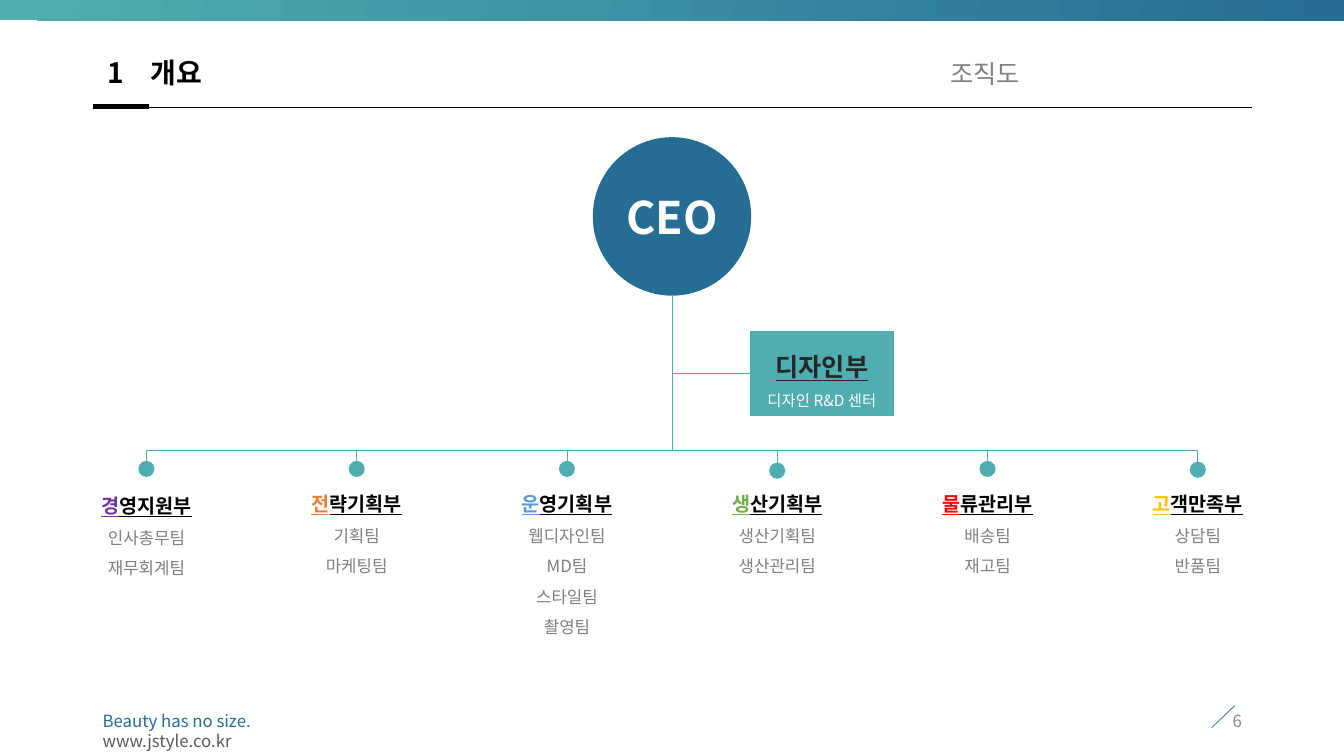
from lxml.etree import SubElement
from pptx import Presentation
from pptx.dml.color import RGBColor
from pptx.enum.shapes import MSO_CONNECTOR as Connector, MSO_SHAPE as Shape
from pptx.enum.text import MSO_ANCHOR as Anchor, PP_ALIGN as Align
from pptx.oxml.ns import qn
from pptx.util import Pt

FONT = "Noto Sans CJK KR"
TEAL, BLUE, BLACK, GRAY, WHITE = "4FAEB1", "256D93", "000000", "808080", "FFFFFF"
color = RGBColor.from_string


def write(frame, paragraphs, align=Align.LEFT, spacing=1.0):
    """Fill a text frame; each paragraph is a list of (text, size, colour, format)."""
    for index, runs in enumerate(paragraphs):
        paragraph = frame.add_paragraph() if index else frame.paragraphs[0]
        paragraph.alignment = align
        paragraph.line_spacing = spacing
        for text, size, hex_color, formats in runs:
            run = paragraph.add_run()
            run.text = text
            run.font.color.rgb = color(hex_color)
            values = {"size": Pt(size), "name": FONT, "bold": False, **formats}
            for name, value in values.items():
                setattr(run.font, name, value)
            SubElement(run._r.get_or_add_rPr(), qn("a:ea"), typeface=FONT)


def draw_line(x1, y1, x2, y2, hex_color=TEAL, width=0.5):
    line = slide.shapes.add_connector(
        Connector.STRAIGHT, Pt(x1), Pt(y1), Pt(x2), Pt(y2))
    line.line.color.rgb = color(hex_color)
    line.line.width = Pt(width)
    SubElement(line._element.spPr, qn("a:effectLst"))
    return line


presentation = Presentation()
presentation.slide_width, presentation.slide_height = Pt(960), Pt(540)
slide = presentation.slides.add_slide(presentation.slide_layouts[5])

# Header rules and page number slash
draw_line(66.24, 77.04, 894.24, 77.04, BLACK)
draw_line(66.24, 76.1, 106.56, 76.1, BLACK, 3)
draw_line(882, 504, 865.44, 519.84, BLUE)

# Title, with tab stops for section name and topic
title = slide.shapes.title
title.left, title.top, title.width, title.height = Pt(66.24), Pt(28.8), Pt(828), Pt(48.24)
frame = title.text_frame
frame.word_wrap = True
frame.vertical_anchor = Anchor.MIDDLE
frame.margin_left = Pt(10.5)
tabs = SubElement(frame.paragraphs[0]._p.get_or_add_pPr(), qn("a:tabLst"))
for position in (31, 602):
    SubElement(tabs, qn("a:tab"), pos=str(Pt(position)), algn="l")
write(frame, [[("1\t개요", 20, BLACK, {"bold": True}), ("\t조직도", 18, GRAY, {})]],
      spacing=0.9)

# Footer and page number
footer = slide.shapes.add_textbox(Pt(66.24), Pt(504), Pt(210), Pt(36))
footer.text_frame.word_wrap = True
write(footer.text_frame, [[("Beauty has no size.", 12, BLUE, {})],
                          [("www.jstyle.co.kr", 12, "595959", {})]])
page_number = slide.shapes.add_textbox(Pt(678.24), Pt(500.4), Pt(216), Pt(28.8))
page_number.text_frame.word_wrap = True
page_number.text_frame.vertical_anchor = Anchor.MIDDLE
write(page_number.text_frame, [[("6", 12, "8C8C8C", {})]], Align.RIGHT)

# Top band
band = slide.shapes.add_shape(Shape.RECTANGLE, 0, 0, Pt(960), Pt(14.4))
band.shadow.inherit = False
band.line.fill.background()
band.fill.gradient()
band.fill.gradient_angle = 350
for stop, hex_color in zip(band.fill.gradient_stops, (TEAL, BLUE)):
    stop.color.rgb = color(hex_color)

# CEO
ceo = slide.shapes.add_shape(Shape.OVAL, Pt(423.4), Pt(98), Pt(113.2), Pt(113.2))
ceo.shadow.inherit = False
ceo.fill.solid()
ceo.fill.fore_color.rgb = color(BLUE)
ceo.line.fill.background()
ceo.text_frame.vertical_anchor = Anchor.MIDDLE
write(ceo.text_frame, [[("CEO", 32, WHITE, {"bold": True})]], Align.CENTER)

# Design department
design = slide.shapes.add_shape(Shape.RECTANGLE, Pt(536.2), Pt(236.9), Pt(101.8), Pt(59.8))
design.shadow.inherit = False
design.fill.solid()
design.fill.fore_color.rgb = color(TEAL)
design.line.color.rgb = color(TEAL)
design.line.width = Pt(0.75)
design.text_frame.word_wrap = False
design.text_frame.vertical_anchor = Anchor.TOP
HEADING = {"bold": True, "underline": True}
write(design.text_frame, [[("디자인부", 18, "262626", HEADING)],
                          [("디자인 R&D 센터", 11, WHITE, {})]], Align.CENTER, 1.5)

# Trunk, design branch and crossbar
FIRST_X, GAP, BAR_Y, DOT = 104.6, 150.2, 321.8, 11.5
draw_line(480, 211.2, 480, BAR_Y)
draw_line(536.2, 266.8, 480, 266.8).begin_connect(design, 1)
draw_line(FIRST_X, BAR_Y, FIRST_X + 5 * GAP, BAR_Y)

# Departments: name, accent colour, teams, text top, dot top
departments = [
    ("경영지원부", "7030A0", ["인사총무팀", "재무회계팀"], 340.9, 329.2),
    ("전략기획부", "ED7D31", ["기획팀", "마케팅팀"], 339.6, 329.2),
    ("운영기획부", "5B9BD5", ["웹디자인팀", "MD팀", "스타일팀", "촬영팀"], 339.6, 329.2),
    ("생산기획부", "70AD47", ["생산기획팀", "생산관리팀"], 339.6, 330.5),
    ("물류관리부", "FF0000", ["배송팀", "재고팀"], 339.6, 329.2),
    ("고객만족부", "FFC000", ["상담팀", "반품팀"], 339.6, 329.8),
]
for index, (name, accent, teams, text_top, dot_top) in enumerate(departments):
    center = FIRST_X + index * GAP
    draw_line(center, 340.6, center, BAR_Y)
    dot = slide.shapes.add_shape(
        Shape.OVAL, Pt(center - DOT / 2), Pt(dot_top), Pt(DOT), Pt(DOT))
    dot.shadow.inherit = False
    dot.fill.solid()
    dot.fill.fore_color.rgb = color(TEAL)
    dot.line.fill.background()
    label = slide.shapes.add_textbox(
        Pt(center - 42.5), Pt(text_top), Pt(85), Pt(33 + 21.75 * len(teams)))
    label.text_frame.word_wrap = False
    heading = [(name[0], 14, accent, HEADING), (name[1:], 14, BLACK, HEADING)]
    write(label.text_frame, [heading] + [[(team, 12, GRAY, {})] for team in teams],
          Align.CENTER, 1.5)

presentation.save("out.pptx")
